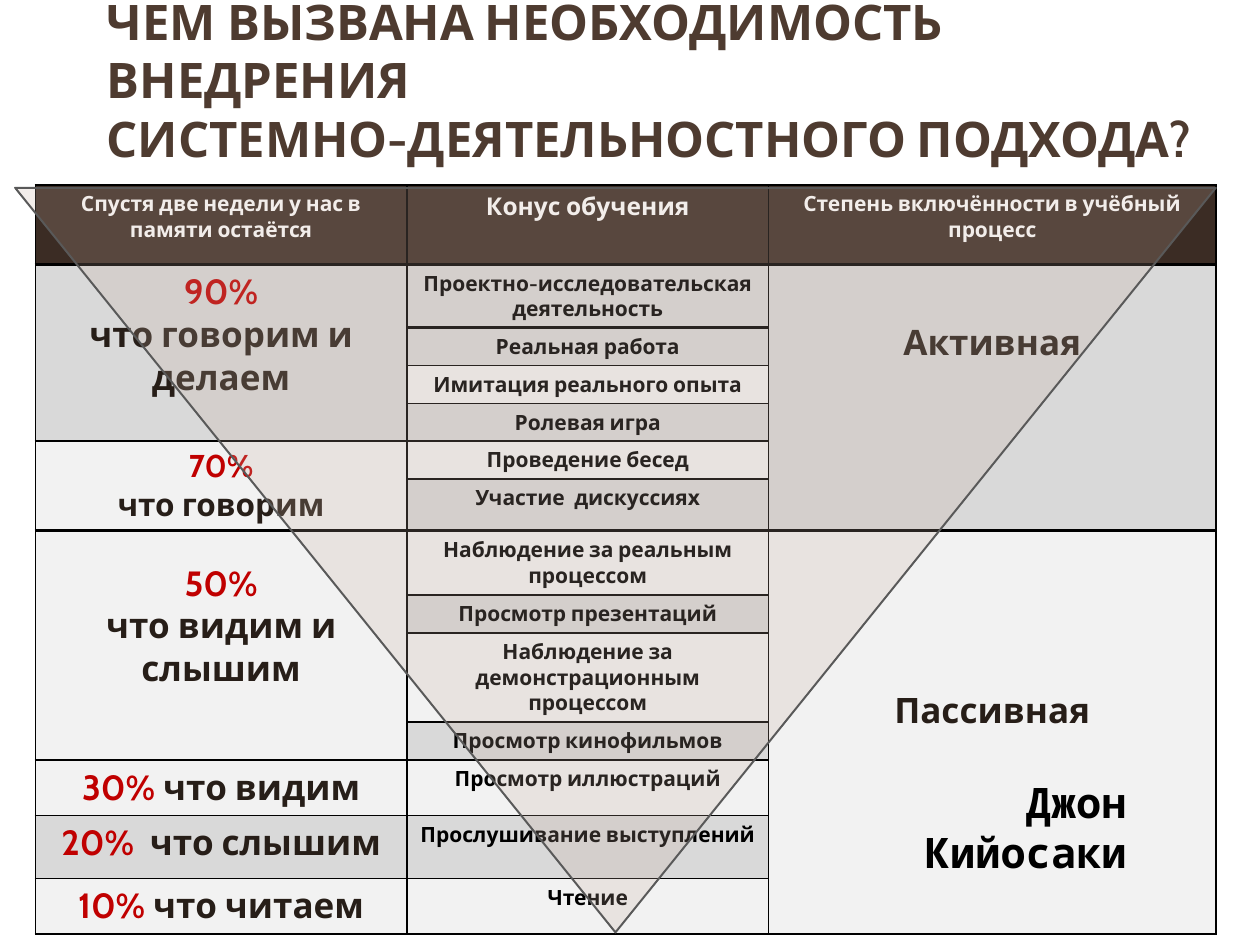
import pptx
import pptx.util
import pptx.dml.color
import pptx.enum.shapes
import pptx.enum.text
import pptx.oxml
import lxml.etree

Inches = pptx.util.Inches
ALIGN = pptx.enum.text.PP_ALIGN
ANCHOR = pptx.enum.text.MSO_ANCHOR
A = "{http://schemas.openxmlformats.org/drawingml/2006/main}"

COLORS = {
    "title": "4E3B30", "header": "3B2C24", "header_text": "FFFFFF",
    "dark_band": "D9D9D9", "light_band": "F2F2F2", "percent": "C00000",
    "phrase": "271E18", "black": "000000", "cone": "C4ADA0", "cone_line": "595959",
}
COLUMN_WIDTHS = [2.95, 2.87, 3.55]
ROW_HEIGHTS = [0.63, 0.5, 0.3, 0.3, 0.3, 0.3, 0.41, 0.51, 0.3, 0.71, 0.3, 0.44, 0.5, 0.44]

HEADERS = [("Спустя две недели у нас в памяти остаётся", 12),
           ("Конус обучения", 14),
           ("Степень включённости в учёбный процесс", 12)]
# First row, rows spanned, percent, phrase, size, band, top margin
RETENTION = [
    (1, 4, "90%", "что говорим и делаем", 20, "dark_band", 0.05),
    (5, 2, "70%", "что говорим", 18, "light_band", 0.05),
    (7, 4, "50%", "что видим и слышим", 20, "light_band", 0.25),
    (11, 1, "30%", " что видим", 20, "light_band", 0.05),
    (12, 1, "20%", "  что слышим", 20, "dark_band", 0.05),
    (13, 1, "10%", " что читаем", 20, "light_band", 0.05),
]
ACTIVITIES = [
    ("Проектно-исследовательская деятельность", "dark_band"),
    ("Реальная работа", "dark_band"),
    ("Имитация реального опыта", "light_band"),
    ("Ролевая игра", "dark_band"),
    ("Проведение бесед", "light_band"),
    ("Участие  дискуссиях", "dark_band"),
    ("Наблюдение за реальным процессом", "light_band"),
    ("Просмотр презентаций", "dark_band"),
    ("Наблюдение за демонстрационным процессом", "light_band"),
    ("Просмотр кинофильмов", "dark_band"),
    ("Просмотр иллюстраций", "light_band"),
    ("Прослушивание выступлений", "dark_band"),
    ("Чтение", "light_band"),
]
# First row, rows spanned, label, band, top margin
INVOLVEMENT = [(1, 6, "Активная", "dark_band", 0.45),
               (7, 7, "Пассивная", "light_band", 1.26)]


def rgb(name):
    return pptx.dml.color.RGBColor.from_string(COLORS[name])


def write(frame, paragraphs, align, font="Cabin"):
    """Fill a frame; each paragraph is a list of (text, size, color) runs."""
    for index, runs in enumerate(paragraphs):
        paragraph = frame.add_paragraph() if index else frame.paragraphs[0]
        paragraph.alignment = align
        for text, size, color in runs:
            run = paragraph.add_run()
            run.text = text
            style = {"name": font, "size": pptx.util.Pt(size), "bold": True}
            for attribute, value in style.items():
                setattr(run.font, attribute, value)
            run.font.color.rgb = rgb(color)


def add_text(slide, box, paragraphs, align, anchor, font="Cabin"):
    frame = slide.shapes.add_textbox(*map(Inches, box)).text_frame
    frame.word_wrap = True
    frame.vertical_anchor = anchor
    write(frame, paragraphs, align, font)


def border_cell(cell, widths):
    """Draw black borders; widths maps L, R, T, B to points, in that order."""
    properties = cell._tc.get_or_add_tcPr()
    for side, width in widths.items():
        line = lxml.etree.SubElement(properties, f"{A}ln{side}", w=str(pptx.util.Pt(width)))
        fill = lxml.etree.SubElement(line, f"{A}solidFill")
        lxml.etree.SubElement(fill, f"{A}srgbClr", val=COLORS["black"])


def fill_cell(table, row, column, paragraphs, band, span=1, top=0.05, heavy=()):
    """Write one cell; heavy lists the row boundaries with a thick line."""
    cell = table.cell(row, column)
    end = row + span
    if span > 1:
        cell.merge(table.cell(end - 1, column))
    for part_row in range(row, end):
        part = table.cell(part_row, column)
        widths = {"L": 1, "R": 1}
        if part_row == row:
            widths["T"] = 2.25 if row in heavy else 1
        if part_row in (row, end - 1):
            widths["B"] = 2.25 if end in heavy else 1
        border_cell(part, widths)
        part.fill.solid()
        part.fill.fore_color.rgb = rgb(band)
    cell.margin_top = Inches(top)
    write(cell.text_frame, paragraphs, ALIGN.CENTER)


def add_learning_table(slide):
    table = slide.shapes.add_table(
        len(ROW_HEIGHTS), len(COLUMN_WIDTHS), Inches(0.28), Inches(1.47),
        Inches(sum(COLUMN_WIDTHS)), Inches(sum(ROW_HEIGHTS))).table
    table.first_row = table.horz_banding = False
    for column, width in zip(table.columns, COLUMN_WIDTHS):
        column.width = Inches(width)
    for row, height in zip(table.rows, ROW_HEIGHTS):
        row.height = Inches(height)

    # Header row
    for column, (text, size) in enumerate(HEADERS):
        fill_cell(table, 0, column, [[(text, size, "header_text")]], "header", heavy=(1,))
    # What stays in memory
    for row, span, percent, phrase, size, band, top in RETENTION:
        share, memory = (percent, size, "percent"), (phrase, size, "phrase")
        paragraphs = [[share], [memory]] if span > 1 else [[share, memory]]
        fill_cell(table, row, 0, paragraphs, band, span, top, heavy=(1, 7))
    # Learning activities
    for row, (activity, band) in enumerate(ACTIVITIES, start=1):
        fill_cell(table, row, 1, [[(activity, 12, "black")]], band, heavy=(1, 2, 7))
    # Degree of involvement
    for row, span, label, band, top in INVOLVEMENT:
        fill_cell(table, row, 2, [[(label, 20, "phrase")]], band, span, top, heavy=(1, 7))


def add_cone(slide):
    cone = slide.shapes.add_shape(
        pptx.enum.shapes.MSO_SHAPE.FLOWCHART_MERGE,
        *map(Inches, (0.12, 1.49, 9.53, 5.91)))
    cone.shadow.inherit = False
    cone.fill.solid()
    cone.fill.fore_color.rgb = rgb("cone")
    cone_color = cone._element.spPr.find(f"{A}solidFill/{A}srgbClr")
    lxml.etree.SubElement(cone_color, f"{A}alpha", val="21000")
    cone.line.color.rgb = rgb("cone_line")
    cone.line.width = pptx.util.Pt(1.13)


def main():
    deck = pptx.Presentation()
    deck.slide_width, deck.slide_height = Inches(10), Inches(7.5)
    slide = deck.slides.add_slide(deck.slide_layouts[6])

    # Title
    title_lines = ["ЧЕМ ВЫЗВАНА НЕОБХОДИМОСТЬ ВНЕДРЕНИЯ",
                   "СИСТЕМНО-ДЕЯТЕЛЬНОСТНОГО ПОДХОДА?"]
    add_text(slide, (0.75, 0.28, 9.25, 1.1),
             [[(line, 28, "title")] for line in title_lines], ALIGN.LEFT, ANCHOR.BOTTOM)
    # Table with the cone over it
    add_learning_table(slide)
    add_cone(slide)
    # Author
    add_text(slide, (6.81, 6.11, 2.23, 0.9), [[("Джон Кийосаки", 24, "black")]],
             ALIGN.RIGHT, ANCHOR.TOP, "Noto Sans Mono")
    deck.save("out.pptx")


if __name__ == "__main__":
    main()
